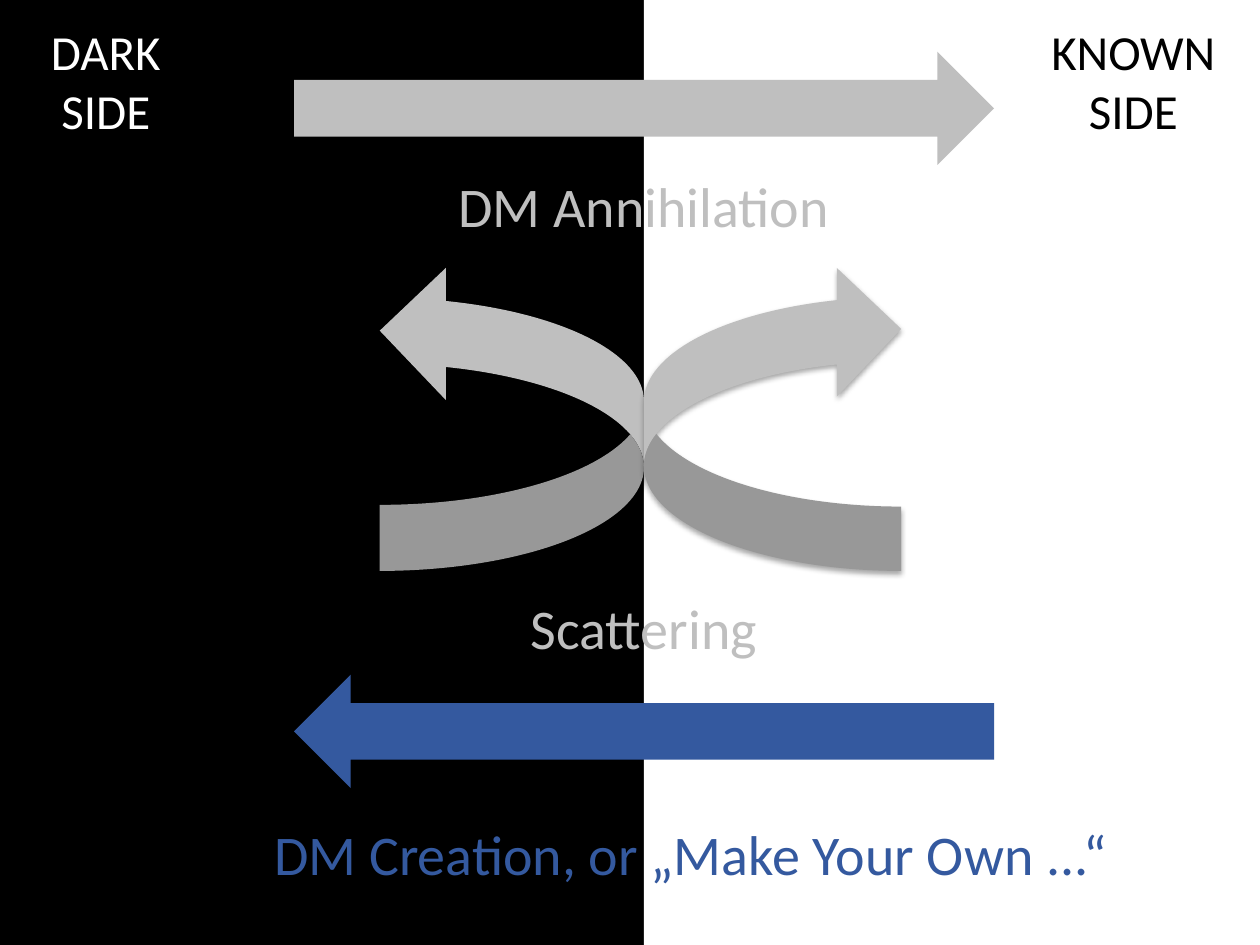
from lxml import etree
from pptx import Presentation
from pptx.dml.color import RGBColor
from pptx.enum.shapes import MSO_SHAPE as SHAPE
from pptx.enum.text import MSO_AUTO_SIZE as AUTO_SIZE, PP_ALIGN as ALIGN
from pptx.oxml import parse_xml
from pptx.oxml.ns import nsdecls, qn
from pptx.util import Pt

COLORS = {"dark": "000000", "known": "FFFFFF", "muted": "BFBFBF", "accent": "34599F"}
WIDTH, HEIGHT, MIDDLE = 720, 540, 368

SHADOW = (
    f'<a:outerShdw {nsdecls("a")} blurRad="{Pt(3.1)}" dist="{Pt(1.8)}" dir="5400000" rotWithShape="0">'
    '<a:srgbClr val="000000"><a:alpha val="35000"/></a:srgbClr></a:outerShdw>'
)


def rgb(name):
    return RGBColor.from_string(COLORS[name])


def add_plain_shape(page, kind, left, top, width, height, color, rotation=0):
    """Add a filled preset shape without outline or shadow."""
    shape = page.shapes.add_shape(kind, Pt(left), Pt(top), Pt(width), Pt(height))
    shape.fill.solid()
    shape.fill.fore_color.rgb = rgb(color)
    shape.line.fill.background()
    shape.shadow.inherit = False
    shape.rotation = rotation
    return shape


deck = Presentation()
deck.slide_width, deck.slide_height = Pt(WIDTH), Pt(HEIGHT)
page = deck.slides.add_slide(deck.slide_layouts[6])
page.background.fill.solid()
page.background.fill.fore_color.rgb = rgb("dark")

add_plain_shape(page, SHAPE.RECTANGLE, MIDDLE, 0, WIDTH - MIDDLE, HEIGHT, "known")

# Straight arrows: annihilation to the right, creation to the left
for top, color, rotation in [(29.5, "muted", 0), (385.5, "accent", 180)]:
    add_plain_shape(page, SHAPE.RIGHT_ARROW, MIDDLE - 200, top, 400, 64.8, color, rotation)

# Scattering: two curved arrows that touch at the border of the two sides
for left, width, mirrored in [(MIDDLE - 151, 151, False), (MIDDLE, 147, True)]:
    arrow = add_plain_shape(page, SHAPE.CURVED_RIGHT_ARROW, left, 151.2, width, 175, "muted", 180)
    if mirrored:
        arrow._element.spPr.find(qn("a:xfrm")).set("flipH", "1")
    arrow._element.spPr.find(qn("a:effectLst")).append(parse_xml(SHADOW))

# A vertical tab makes a line break
labels = [
    ("DM Annihilation", 246.2, 94.3, 243.4, 46, 32, "muted"),
    ("Scattering", 262.1, 335.5, 211.7, 46, 32, "muted"),
    ("DM Creation, or „Make Your Own ...“", 136, 465, 517.7, 46, 32, "accent"),
    ("DARK\vSIDE", 15.1, 8.6, 90.7, 75, 28, "known"),
    ("KNOWN\vSIDE", 588.2, 8.6, 118.8, 75, 28, "dark"),
]
for text, left, top, width, height, size, color in labels:
    box = page.shapes.add_textbox(Pt(left), Pt(top), Pt(width), Pt(height))
    frame = box.text_frame
    frame.word_wrap = True
    frame.auto_size = AUTO_SIZE.SHAPE_TO_FIT_TEXT
    frame.text = text
    para = frame.paragraphs[0]
    para.alignment = ALIGN.CENTER
    para.font.name = "Calibri"
    para.font.size = Pt(size)
    para.font.color.rgb = rgb(color)

deck.save("out.pptx")
